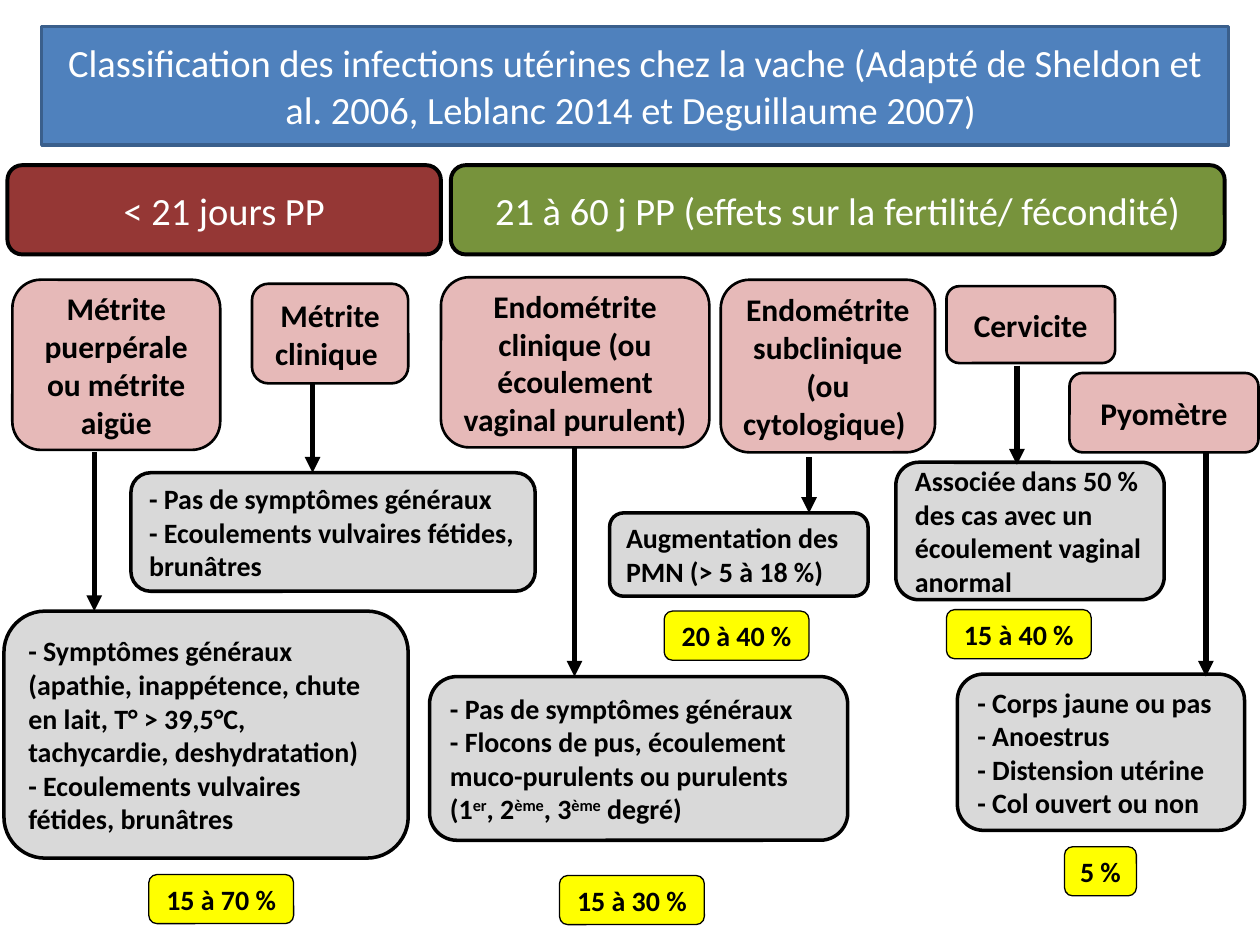
"""Build a one-slide chart classifying uterine infections in cows."""
from lxml import etree
from pptx import Presentation, util as u
from pptx.dml.color import RGBColor
from pptx.enum import shapes, text
from pptx.oxml import ns

BLACK, WHITE = "000000", "FFFFFF"
PINK, GREY, YELLOW = "E6B9B8", "D9D9D9", "FFFF00"


def rgb(value):
    """Turn a hex string into a colour."""
    return RGBColor.from_string(value)


class Diagram:
    """Hold the style and the current slide."""

    font = "Calibri"

    def __init__(self, prs):
        """Add a title-only slide."""
        self.s = prs.slides.add_slide(prs.slide_layouts[5])

    def style(self, sp, lines, fill, line, width, size, color, bold, align):
        """Format a shape and write its paragraphs, with ^ around superscripts."""
        sp.shadow.inherit = False
        sp.fill.solid()
        sp.fill.fore_color.rgb = rgb(fill)
        sp.line.color.rgb = rgb(line)
        sp.line.width = u.Pt(width)
        tf = sp.text_frame
        tf.word_wrap = True
        tf.auto_size = text.MSO_AUTO_SIZE.NONE
        tf.vertical_anchor = text.MSO_ANCHOR.MIDDLE
        for i, content in enumerate(lines):
            p = tf.add_paragraph() if i else tf.paragraphs[0]
            p.alignment = align
            p.font.name, p.font.size, p.font.bold = self.font, u.Pt(size), bold
            p.font.color.rgb = rgb(color)
            for j, part in enumerate(content.split("^")):
                r = p.add_run()
                r.text = part
                if j % 2:
                    r._r.get_or_add_rPr().set("baseline", "30000")

    def title(self, box, content):
        """Turn the title placeholder into a rounded banner."""
        sp = self.s.shapes.title
        sp.left, sp.top, sp.width, sp.height = map(u.Cm, box)
        geom = etree.SubElement(sp._element.spPr, ns.qn("a:prstGeom"), prst="roundRect")
        etree.SubElement(geom, ns.qn("a:avLst"))
        self.style(sp, [content], "4F81BD", "3A5F8C", 2, 22, WHITE, False,
                   text.PP_ALIGN.CENTER)

    def box(self, box, lines, fill, width, size, color=BLACK, bold=True,
            align=text.PP_ALIGN.CENTER):
        """Add a rounded box with text."""
        sp = self.s.shapes.add_shape(shapes.MSO_SHAPE.ROUNDED_RECTANGLE, *map(u.Cm, box))
        self.style(sp, lines, fill, BLACK, width, size, color, bold, align)

    def period(self, box, content, fill):
        """Add a period header."""
        self.box(box, [content], fill, 2.25, 22, WHITE, False)

    def disease(self, box, content):
        """Add a disease name."""
        self.box(box, [content], PINK, 1.5, 18)

    def signs(self, box, lines):
        """Add a left-aligned list of signs."""
        self.box(box, lines, GREY, 2, 16, align=text.PP_ALIGN.LEFT)

    def rate(self, x, y, content, width=2.92):
        """Add a frequency label."""
        self.box((x, y, width, 0.99), [content], YELLOW, 0.75, 16)

    def arrow(self, x, top, bottom):
        """Add a downward arrow."""
        c = self.s.shapes.add_connector(shapes.MSO_CONNECTOR.STRAIGHT,
                                        *map(u.Cm, (x, top, x, bottom)))
        c.line.color.rgb = rgb(BLACK)
        c.line.width = u.Pt(3)
        etree.SubElement(c.line._get_or_add_ln(), ns.qn("a:tailEnd"), type="triangle")
        etree.SubElement(c._element.spPr, ns.qn("a:effectLst"))


def main():
    """Draw the slide and save it."""
    prs = Presentation()
    prs.slide_width, prs.slide_height = u.Cm(25.4), u.Cm(19.05)
    d = Diagram(prs)
    d.title((0.84, 0.53, 23.93, 2.39),
            "Classification des infections utérines chez la vache "
            "(Adapté de Sheldon et al. 2006, Leblanc 2014 et Deguillaume 2007) ")
    d.period((0.15, 3.33, 8.74, 1.8), "< 21 jours PP", "953735")
    d.period((9.09, 3.33, 15.6, 1.8),
             "21 à 60 j PP (effets sur la fertilité/ fécondité)", "77933C")

    for box, name in [
        ((0.25, 5.64, 4.19, 3.43), "Métrite puerpérale ou métrite aigüe"),
        ((5.08, 5.72, 3.15, 2.01), "Métrite clinique "),
        ((8.89, 5.59, 5.41, 3.43), "Endométrite clinique (ou écoulement vaginal purulent) "),
        ((14.53, 5.64, 4.32, 3.48), "Endométrite subclinique (ou cytologique) "),
        ((19.08, 5.77, 3.4, 1.55), "Cervicite"),
        ((21.56, 7.52, 3.81, 1.6), "Pyomètre"),
    ]:
        d.disease(box, name)

    general = "- Pas de symptômes généraux"
    discharge = "- Ecoulements vulvaires fétides, brunâtres"
    for box, lines in [
        ((0.08, 12.32, 8.15, 4.98),
         ["- Symptômes généraux (apathie, inappétence, chute en lait, "
          "T° > 39,5°C, tachycardie, deshydratation)", discharge]),
        ((2.64, 9.53, 8.15, 2.39), [general, discharge]),
        ((8.66, 13.64, 8.43, 3.3),
         [general, "- Flocons de pus, écoulement muco-purulents ou purulents "
          "(1^er^, 2^ème^, 3^ème^ degré)"]),
        ((12.29, 10.34, 5.21, 1.68), ["Augmentation des PMN (> 5 à 18 %)"]),
        ((18.06, 9.32, 5.41, 2.77),
         ["Associée dans 50 % des cas avec un écoulement vaginal anormal"]),
        ((19.3, 13.59, 5.79, 3.15),
         ["- Corps jaune ou pas", "- Anoestrus", "- Distension utérine",
          "- Col ouvert ou non"]),
    ]:
        d.signs(box, lines)

    for x, y, content in [(3, 17.63, "15 à 70 %"), (11.28, 17.65, "15 à 30 %"),
                          (13.39, 12.32, "20 à 40 %"), (19.08, 12.29, "15 à 40 %")]:
        d.rate(x, y, content)
    d.rate(21.46, 17.07, "5 %", 1.45)

    for x, top, bottom in [(1.9, 9.12, 12.32), (6.3, 7.72, 9.53), (11.58, 9.02, 13.64),
                           (16.31, 9.22, 10.34), (20.5, 7.37, 9.37), (24.31, 9.12, 13.64)]:
        d.arrow(x, top, bottom)
    prs.save("out.pptx")


if __name__ == "__main__":
    main()
